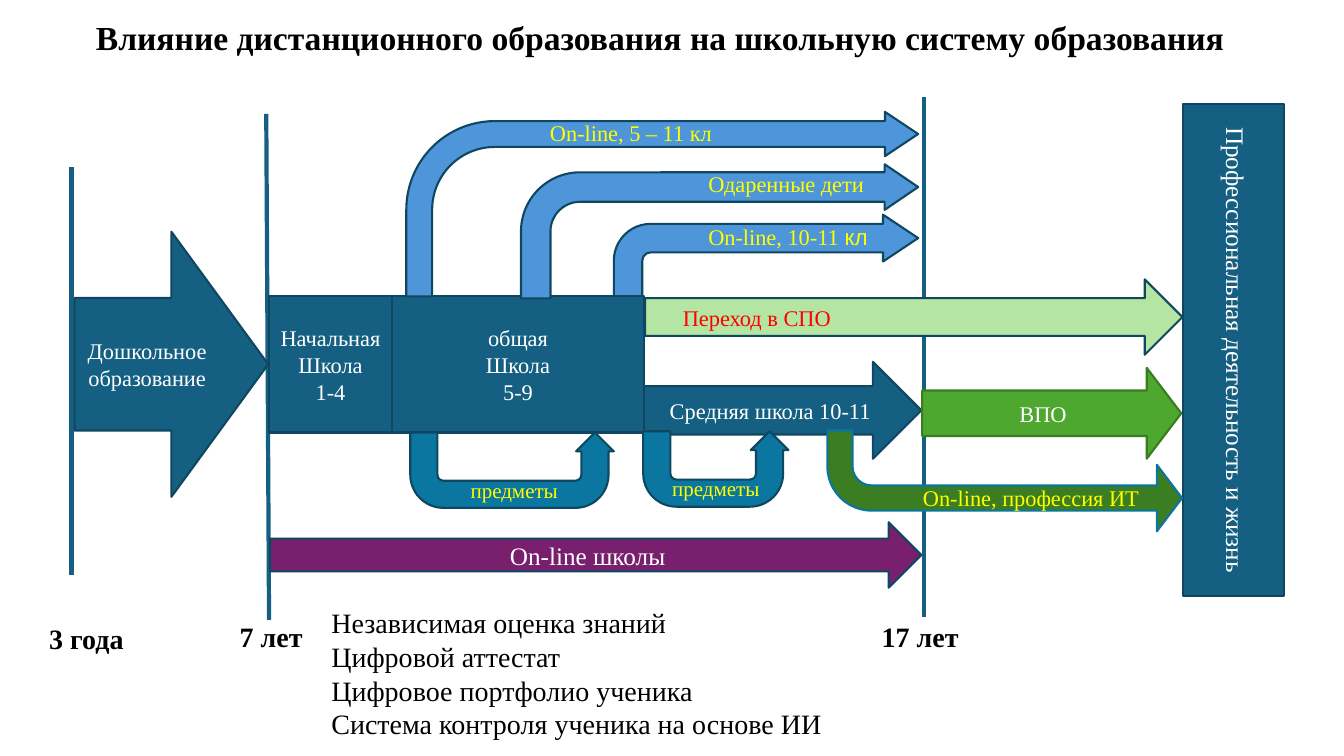
import lxml.etree
import pptx
import pptx.dml.color
import pptx.enum.shapes
import pptx.enum.text
import pptx.oxml.ns
import pptx.util

Cm = pptx.util.Cm
Pt = pptx.util.Pt
qn = pptx.oxml.ns.qn
KIND = pptx.enum.shapes.MSO_SHAPE
ALIGN = pptx.enum.text.PP_ALIGN
ANCHOR = pptx.enum.text.MSO_ANCHOR

COLOURS = {
    "white": "FFFFFF", "black": "000000", "yellow": "FFFF00", "red": "FF0000",
    "teal": "156082", "outline": "104760", "sky": "4E95D9", "blue": "0B76A0",
    "blue_edge": "0B759E", "green": "4EA72E", "green_edge": "3A7C22",
    "pale_green": "B4E5A2", "dark_green": "3B7D23", "purple": "78206E",
}
FONT = "Times New Roman"


def colour(name):
    return pptx.dml.color.RGBColor.from_string(COLOURS[name])


def add_span(para, text, size, ink, bold=False, font=FONT):
    span = para.add_run()
    span.text = text
    span.font.name = font
    span.font.size = Pt(size)
    span.font.bold = bold
    span.font.color.rgb = colour(ink)


def write(box, text, size=16, ink="white", bold=False, align=ALIGN.CENTER,
          anchor=ANCHOR.MIDDLE, indent=0.25, tail="", tail_font="Arial"):
    frame = box.text_frame
    frame.word_wrap = True
    frame.auto_size = pptx.enum.text.MSO_AUTO_SIZE.NONE
    frame.vertical_anchor = anchor
    frame.margin_left = Cm(indent)
    for number, line in enumerate(text.split("\n")):
        para = frame.paragraphs[0] if number == 0 else frame.add_paragraph()
        para.alignment = align
        para.line_spacing = 1.0
        para.space_before = Pt(0)
        add_span(para, line, size, ink, bold)
    if tail:
        add_span(para, tail, size, ink, bold, tail_font)


def add_figure(page, kind, place, fill, edge="outline", adjust=(), flip=False):
    box = page.shapes.add_shape(kind, *map(Cm, place))
    box.shadow.inherit = False
    box.fill.solid()
    box.fill.fore_color.rgb = colour(fill)
    box.line.color.rgb = colour(edge)
    box.line.width = Pt(1.5)
    for number, value in enumerate(adjust):
        box.adjustments[number] = value
    if flip:
        box._element.spPr.find(qn("a:xfrm")).set("flipV", "1")
    return box


def add_age_line(page, start, end):
    line = page.shapes.add_connector(
        pptx.enum.shapes.MSO_CONNECTOR.STRAIGHT, *map(Cm, start + end))
    line.line.color.rgb = colour("teal")
    line.line.width = Pt(3)
    lxml.etree.SubElement(line._element.spPr, qn("a:effectLst"))


def add_label(page, text, place, **style):
    box = page.shapes.add_textbox(*map(Cm, place))
    write(box, text, align=ALIGN.LEFT, anchor=ANCHOR.TOP, **style)


def fill_placeholder(box, text, place, **style):
    box.left, box.top, box.width, box.height = map(Cm, place)
    write(box, text, anchor=ANCHOR.TOP, ink="black", **style)


def remove_bullets(box):
    for para in box.text_frame.paragraphs:
        settings = para._p.get_or_add_pPr()
        settings.set("marL", "0")
        settings.set("indent", "0")
        lxml.etree.SubElement(settings, qn("a:buNone"))


def add_ages(page):
    for text, left, top, start, end in (
        ("3 года", 0.99, 15.54, (1.8, 4.22), (1.8, 14.5)),
        ("7 лет", 5.79, 15.49, (6.71, 2.87), (6.78, 15.62)),
        ("17 лет", 21.97, 15.49, (23.29, 2.44), (23.29, 15.54)),
    ):
        add_age_line(page, start, end)
        add_label(page, text, (left, top, 2.54, 1.12), size=20, ink="black", bold=True)


def add_stages(page):
    career = add_figure(page, KIND.RECTANGLE, (29.82, 2.62, 2.54, 12.4), "teal")
    write(career, "Профессиональная деятельность и жизнь", size=18)
    career.text_frame._txBody.bodyPr.set("vert", "vert")

    for text, kind, place, fill, edge, adjust, style in (
        ("Дошкольное\nобразование", KIND.RIGHT_ARROW, (1.88, 5.84, 4.88, 6.68),
         "teal", "outline", (), {}),
        ("Средняя школа 10-11", KIND.RIGHT_ARROW, (16.21, 9.12, 7.01, 2.44),
         "teal", "outline", (), {}),
        ("ВПО", KIND.RIGHT_ARROW, (23.24, 9.27, 6.53, 2.29),
         "green", "green_edge", (0.5, 0.38), {}),
        ("Начальная\nШкола\n1-4", KIND.RECTANGLE, (6.78, 7.47, 3.1, 3.43),
         "teal", "outline", (), {}),
        ("общая\nШкола\n5-9", KIND.RECTANGLE, (9.88, 7.47, 6.35, 3.43),
         "teal", "outline", (), {}),
        ("Переход в СПО", KIND.RIGHT_ARROW, (16.26, 7.04, 13.54, 1.9),
         "pale_green", "outline", (),
         {"ink": "red", "align": ALIGN.LEFT, "indent": 0.95}),
        ("On-line школы", KIND.RIGHT_ARROW, (6.81, 13.16, 16.41, 1.65),
         "purple", "outline", (), {"size": 18}),
    ):
        write(add_figure(page, kind, place, fill, edge, adjust), text, **style)


def add_online_paths(page):
    for place, adjust in (
        ((10.24, 2.82, 12.9, 4.65), (0.14, 0.12, 0.18, 0.48)),
        ((13.13, 4.14, 10.01, 3.38), (0.22, 0.17, 0.25, 0.44)),
    ):
        add_figure(page, KIND.BENT_ARROW, place, "sky", adjust=adjust)
    add_label(page, "On-line, 5 – 11 кл", (13.61, 2.87, 6.68, 0.94), ink="yellow")
    add_label(page, "Одаренные дети", (17.6, 4.17, 4.72, 0.94), ink="yellow")
    add_label(page, "On-line, 10-11 ", (17.6, 5.49, 5, 0.94), ink="yellow", tail="кл")

    for left, top, width, text_left, text_top in (
        (10.34, 10.9, 5.13, 11.61, 11.91),
        (16.21, 10.87, 3.66, 16.69, 11.86),
    ):
        add_figure(page, KIND.U_TURN_ARROW, (left, top, width, 1.9), "blue",
                   adjust=(0.36, 0.25, 0.25, 0.44, 1), flip=True)
        add_label(page, "предметы", (text_left, text_top, 3.28, 0.89),
                  size=15, ink="yellow")

    add_figure(page, KIND.BENT_ARROW, (20.85, 10.85, 8.94, 2.54), "dark_green",
               "blue_edge", (0.25, 0.33, 0.25, 0.44), flip=True)
    add_label(page, "On-line, профессия ИТ", (23.01, 12.07, 6.48, 0.94), ink="yellow")


def main():
    deck = pptx.Presentation()
    deck.slide_width, deck.slide_height = Cm(33.87), Cm(19.05)
    page = deck.slides.add_slide(deck.slide_layouts[1])
    fill_placeholder(
        page.shapes.title,
        "Влияние дистанционного образования на школьную систему образования",
        (0, 0.3, 33.27, 1.27), size=24, bold=True)
    outcomes = page.placeholders[1]
    fill_placeholder(
        outcomes,
        "Независимая оценка знаний\nЦифровой аттестат\n"
        "Цифровое портфолио ученика\nСистема контроля ученика на основе ИИ",
        (8.1, 15.14, 14.94, 3.68), size=20, align=ALIGN.LEFT)
    remove_bullets(outcomes)

    add_figure(page, KIND.BENT_ARROW, (15.47, 5.41, 7.67, 2.11), "sky",
               adjust=(0.34, 0.28, 0.42, 0.44))
    add_ages(page)
    add_stages(page)
    add_online_paths(page)
    deck.save("out.pptx")


if __name__ == "__main__":
    main()
